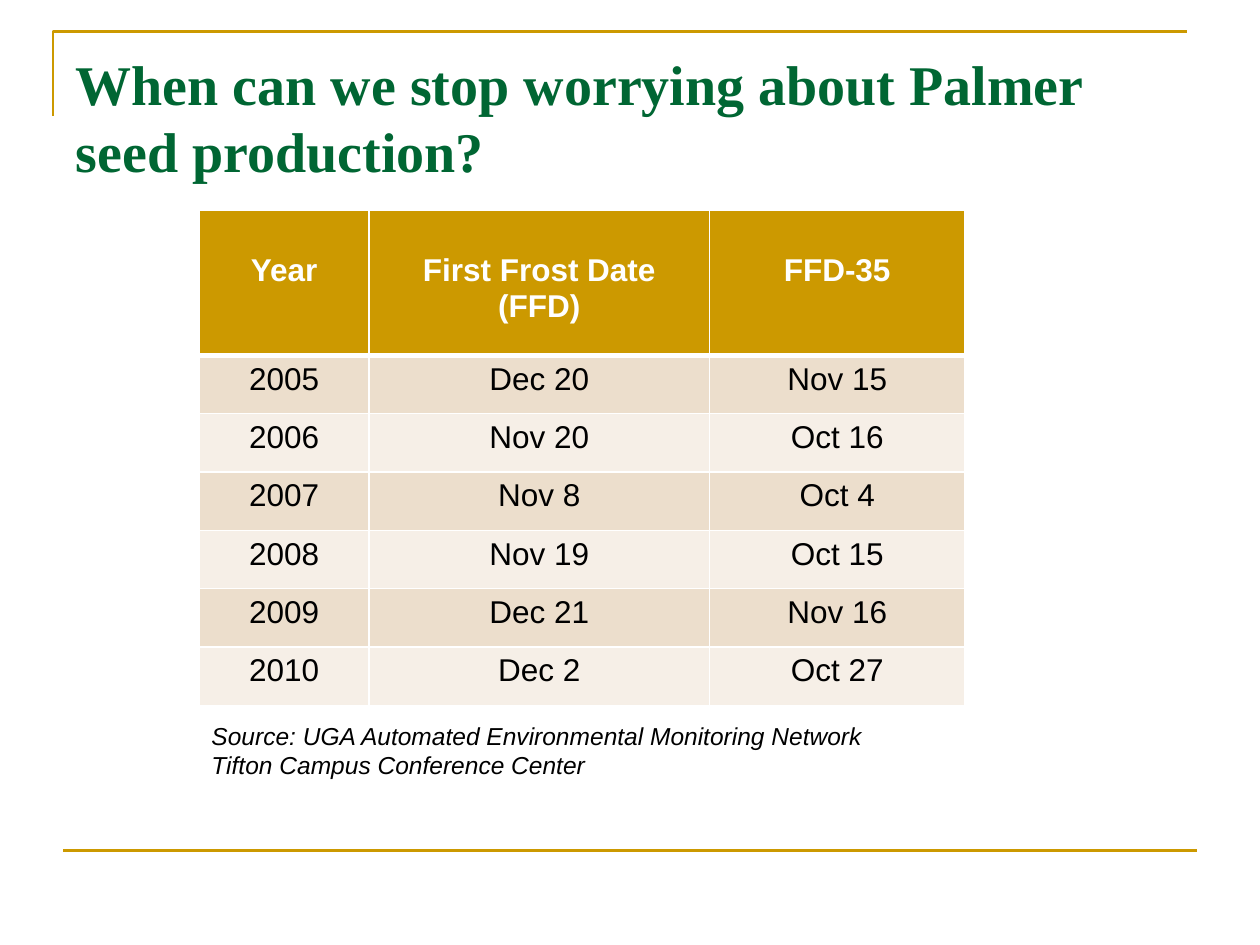
import pptx
import pptx.util
import pptx.dml.color
import pptx.enum.shapes
import pptx.enum.text
import pptx.oxml
import pptx.oxml.ns

Inches = pptx.util.Inches
Pt = pptx.util.Pt
RGBColor = pptx.dml.color.RGBColor
Align = pptx.enum.text.PP_ALIGN

GOLD = RGBColor(0xCC, 0x99, 0x00)
GREEN = RGBColor(0x00, 0x66, 0x33)
SAND = RGBColor(0xEC, 0xDE, 0xCC)
CREAM = RGBColor(0xF6, 0xEF, 0xE7)
WHITE = RGBColor(0xFF, 0xFF, 0xFF)
BLACK = RGBColor(0x00, 0x00, 0x00)

SPACE = pptx.oxml.ns.nsdecls("a")
HEADS = ["Year", "First Frost Date (FFD)", "FFD-35"]
DATES = [
    ["2005", "Dec 20", "Nov 15"],
    ["2006", "Nov 20", "Oct 16"],
    ["2007", "Nov 8", "Oct 4"],
    ["2008", "Nov 19", "Oct 15"],
    ["2009", "Dec 21", "Nov 16"],
    ["2010", "Dec 2", "Oct 27"],
]
WIDTHS = [1.35, 2.7, 2.03]
HEIGHT = 3.93
HEAD = 1.15


def style(frame, name, size, color, bold=False, italic=False, align=Align.LEFT):
    """Format every run of a text frame."""
    for para in frame.paragraphs:
        para.alignment = align
        for run in para.runs:
            font = run.font
            font.name, font.size = name, Pt(size)
            font.bold, font.italic = bold, italic
            font.color.rgb = color


def stroke(shape):
    """Give a shape the thin gold line."""
    shape.line.color.rgb = GOLD
    shape.line.width = Pt(1.5)


def add_frame(slide):
    """Draw the corner line at the top and the rule at the bottom."""
    pen = slide.shapes.build_freeform(Inches(0.42), Inches(0.92))
    pen.add_line_segments(
        [(Inches(0.42), Inches(0.25)), (Inches(9.42), Inches(0.25))], close=False)
    corner = pen.convert_to_shape()
    corner.shadow.inherit = False
    corner.fill.background()
    stroke(corner)
    rule = slide.shapes.add_connector(
        pptx.enum.shapes.MSO_CONNECTOR.STRAIGHT,
        Inches(0.5), Inches(6.75), Inches(9.5), Inches(6.75))
    stroke(rule)
    props = rule._element.spPr
    props.append(pptx.oxml.parse_xml(f"<a:effectLst {SPACE}/>"))


def add_title(slide, text):
    """Fill and place the title."""
    title = slide.shapes.title
    title.left, title.top = Inches(0.5), Inches(0.3)
    title.width, title.height = Inches(9), Inches(1.25)
    frame = title.text_frame
    frame.text = text
    frame.word_wrap = True
    frame.auto_size = pptx.enum.text.MSO_AUTO_SIZE.NONE
    frame.vertical_anchor = pptx.enum.text.MSO_ANCHOR.MIDDLE
    style(frame, "Times New Roman", 32, GREEN, bold=True)


def set_edge(cell, side, points):
    """Add one white border to a cell, ahead of its fill."""
    edge = pptx.oxml.parse_xml(
        f'<a:{side} {SPACE} w="{Pt(points)}"><a:solidFill>'
        f'<a:srgbClr val="{WHITE}"/></a:solidFill></a:{side}>')
    props = cell._tc.get_or_add_tcPr()
    fill = props.find(pptx.oxml.ns.qn("a:solidFill"))
    fill.addprevious(edge)


def add_dates(slide):
    """Build the table of frost dates."""
    rows = [HEADS] + DATES
    table = slide.shapes.add_table(
        len(rows), len(HEADS), Inches(1.58), Inches(1.67),
        Inches(sum(WIDTHS)), Inches(HEIGHT)).table
    for col, width in zip(table.columns, WIDTHS):
        col.width = Inches(width)
    for i, texts in enumerate(rows):
        head = i == 0
        table.rows[i].height = Inches(HEAD if head else (HEIGHT - HEAD) / len(DATES))
        for j, text in enumerate(texts):
            cell = table.cell(i, j)
            cell.text_frame.text = text
            cell.fill.solid()
            cell.fill.fore_color.rgb = GOLD if head else SAND if i % 2 else CREAM
            if head:
                cell.margin_top = Inches(0.34)
            style(cell.text_frame, "Arial", 18, WHITE if head else BLACK,
                  bold=head, align=Align.CENTER)
            for side in ("lnL", "lnR"):
                set_edge(cell, side, 1)
            set_edge(cell, "lnT", 3 if i == 1 else 1)
            set_edge(cell, "lnB", 3 if head else 1)


def add_source(slide, text):
    """Add the source note below the table."""
    box = slide.shapes.add_textbox(
        Inches(1.58), Inches(5.67), Inches(5.39), Inches(0.57))
    frame = box.text_frame
    frame.text = text
    frame.word_wrap = False
    frame.auto_size = pptx.enum.text.MSO_AUTO_SIZE.SHAPE_TO_FIT_TEXT
    style(frame, "Arial", 14, BLACK, italic=True)


def main():
    """Build the slide and save it."""
    deck = pptx.Presentation()
    deck.slide_width, deck.slide_height = Inches(10), Inches(7.5)
    slide = deck.slides.add_slide(deck.slide_layouts[5])
    add_frame(slide)
    add_title(slide, "When can we stop worrying about Palmer seed production?")
    add_dates(slide)
    add_source(slide, "Source: UGA Automated Environmental Monitoring Network\n"
                      "Tifton Campus Conference Center")
    deck.save("out.pptx")


if __name__ == "__main__":
    main()
